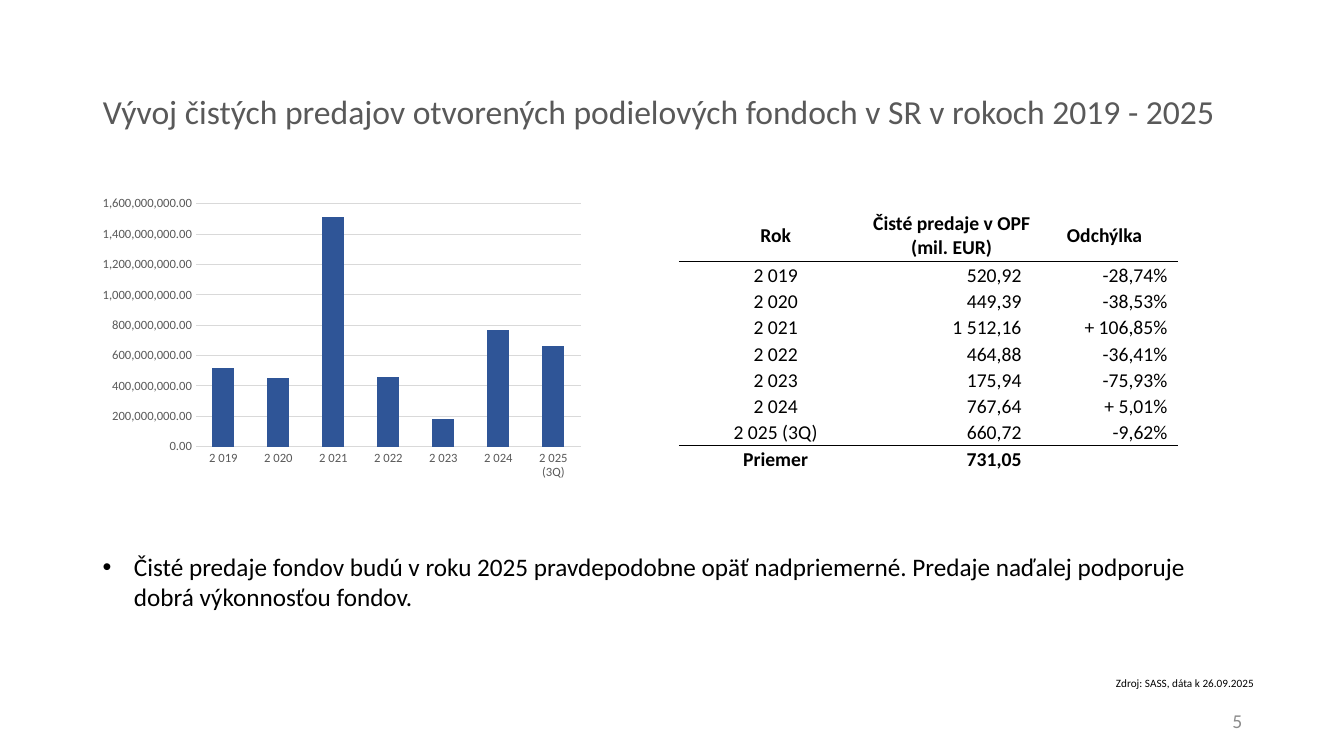
from dataclasses import dataclass
from lxml import etree
from pptx import Presentation, util as u
from pptx.chart.data import CategoryChartData
from pptx.dml.color import RGBColor
from pptx.enum import chart as ch, text as tx
from pptx.oxml import ns


@dataclass(frozen=True)
class Theme:
    """Colours, font and type sizes of the slide."""
    font: str = "Calibri"
    ink: str = "000000"
    gray: str = "595959"
    pale: str = "8C8C8C"
    grid: str = "D9D9D9"
    bar: str = "2F5597"
    head: int = 24
    body: int = 18
    cell: int = 14
    axis: int = 9
    note: int = 8


T = Theme()
WIDE, HIGH = 13.33, 7.5
HEADS = ["Rok", "Čisté predaje v OPF (mil. EUR)", "Odchýlka"]
ROWS = [
    ("2 019", "520,92", "-28,74%"),
    ("2 020", "449,39", "-38,53%"),
    ("2 021", "1 512,16", "+ 106,85%"),
    ("2 022", "464,88", "-36,41%"),
    ("2 023", "175,94", "-75,93%"),
    ("2 024", "767,64", "+ 5,01%"),
    ("2 025 (3Q)", "660,72", "-9,62%"),
]
MEAN = ("Priemer", "731,05", "")
SALES = [520, 450, 1510, 460, 180, 770, 660]


def area(left, top, wide, high):
    """Turn percentages of the slide into a box."""
    across, down = WIDE / 100, HIGH / 100
    return [u.Inches(n) for n in (left * across, top * down, wide * across, high * down)]


def style(font, size, color, bold=False):
    """Format a font."""
    font.name, font.size, font.bold = T.font, u.Pt(size), bold
    font.color.rgb = RGBColor.from_string(color)


def title(slide, box, words):
    """Place the title placeholder in its box."""
    head = slide.shapes.title
    head.left, head.top, head.width, head.height = box
    frame = head.text_frame
    frame.text = words
    frame.vertical_anchor = tx.MSO_ANCHOR.MIDDLE
    para = frame.paragraphs[0]
    para.alignment, para.line_spacing = tx.PP_ALIGN.LEFT, 0.9
    style(para.runs[0].font, T.head, T.gray)


def label(slide, box, words, size, color, align=tx.PP_ALIGN.LEFT,
          anchor=tx.MSO_ANCHOR.TOP):
    """Add a text box and return its paragraph."""
    frame = slide.shapes.add_textbox(*box).text_frame
    frame.word_wrap, frame.vertical_anchor = True, anchor
    frame.text = words
    para = frame.paragraphs[0]
    para.alignment = align
    style(para.runs[0].font, size, color)
    return para


def bullet(slide, box, words):
    """Add a bulleted remark."""
    props = label(slide, box, words, T.body, T.ink)._p.get_or_add_pPr()
    props.set("marL", str(u.Inches(0.31)))
    props.set("indent", str(u.Inches(-0.31)))
    etree.SubElement(props, ns.qn("a:buFont"), typeface="Arial")
    etree.SubElement(props, ns.qn("a:buChar"), char="•")


def chart(slide, box):
    """Add the column chart of yearly net sales."""
    data = CategoryChartData()
    data.categories = [row[0] for row in ROWS]
    data.add_series("Series 1", [n * 1_000_000 for n in SALES])
    plot = slide.shapes.add_chart(ch.XL_CHART_TYPE.COLUMN_CLUSTERED, *box, data).chart
    plot.has_legend = plot.has_title = False
    style(plot.font, 10, T.ink)
    for axis in (plot.category_axis, plot.value_axis):
        style(axis.tick_labels.font, T.axis, T.gray)
        axis.major_tick_mark = axis.minor_tick_mark = ch.XL_TICK_MARK.NONE
        axis.format.line.fill.background()
    axis = plot.value_axis
    axis.tick_labels.number_format = "#,##0.00"
    axis.tick_labels.number_format_is_linked = False
    line = axis.major_gridlines.format.line
    line.color.rgb, line.width = RGBColor.from_string(T.grid), u.Pt(0.75)
    bars = plot.plots[0]
    bars.gap_width, bars.vary_by_categories = 150, False
    fill = bars.series[0].format.fill
    fill.solid()
    fill.fore_color.rgb = RGBColor.from_string(T.bar)


def edge(cell, side, width):
    """Draw one border of a cell."""
    line = etree.SubElement(cell._tc.get_or_add_tcPr(), ns.qn("a:" + side), w=str(u.Pt(width)))
    fill = etree.SubElement(line, ns.qn("a:solidFill"))
    etree.SubElement(fill, ns.qn("a:srgbClr"), val=T.ink)


def write(cell, words, col, head, bold):
    """Fill in and format one table cell."""
    cell.text = words
    right = col > 0 and not head
    cell.margin_left = cell.margin_top = u.Inches(0.01)
    cell.margin_right = u.Inches(0.1 if right else 0.01)
    cell.margin_bottom = 0
    cell.vertical_anchor = tx.MSO_ANCHOR.MIDDLE if head else tx.MSO_ANCHOR.BOTTOM
    para = cell.text_frame.paragraphs[0]
    para.alignment = tx.PP_ALIGN.RIGHT if right else tx.PP_ALIGN.CENTER
    for run in para.runs:
        style(run.font, T.cell, T.ink, bold)
    if not words:
        etree.SubElement(para._p, ns.qn("a:endParaRPr"), sz=str(T.cell * 100))


def table(slide, box):
    """Add the table, with a header two rows high."""
    rows = [HEADS, *ROWS, MEAN]
    last = len(rows) - 1
    grid = slide.shapes.add_table(len(rows), len(HEADS), *box).table
    grid.first_row = grid.horz_banding = False
    for col, share in zip(grid.columns, (38.6, 32.1, 29.3)):
        col.width = int(box[2] * share / 100)
    unit = box[3] // (len(rows) + 1)
    rules = {0: 0.5, last - 1: 1}
    for r, row in enumerate(rows):
        grid.rows[r].height = unit * (1 if r else 2)
        for c, words in enumerate(row):
            cell = grid.cell(r, c)
            write(cell, words, c, r == 0, r in (0, last))
            if r - 1 in rules:
                edge(cell, "lnT", rules[r - 1])
            if r in rules:
                edge(cell, "lnB", rules[r])
            cell.fill.background()


def build(slide):
    """Lay out the sales slide."""
    title(slide, area(6.9, 5.33, 89.57, 19.33),
          "Vývoj čistých predajov otvorených podielových fondoch v SR v rokoch 2019 - 2025")
    label(slide, area(70.67, 92.67, 22.5, 5.33), "5", T.cell, T.pale,
          tx.PP_ALIGN.RIGHT, tx.MSO_ANCHOR.MIDDLE)
    bullet(slide, area(6.9, 72.27, 82.37, 9.47),
           "Čisté predaje fondov budú v roku 2025 pravdepodobne opäť nadpriemerné. "
           "Predaje naďalej podporuje dobrá výkonnosťou fondov.")
    chart(slide, area(6.9, 25.2, 37.06, 39.07))
    table(slide, area(50.56, 27.6, 37.06, 34.8))
    label(slide, area(82.3, 88.8, 12.38, 3.2), "Zdroj: SASS, dáta k 26.09.2025", T.note, T.ink)


def main():
    """Create and save the deck."""
    deck = Presentation()
    deck.slide_width, deck.slide_height = u.Inches(WIDE), u.Inches(HIGH)
    build(deck.slides.add_slide(deck.slide_layouts[5]))
    deck.save("out.pptx")


if __name__ == "__main__":
    main()
